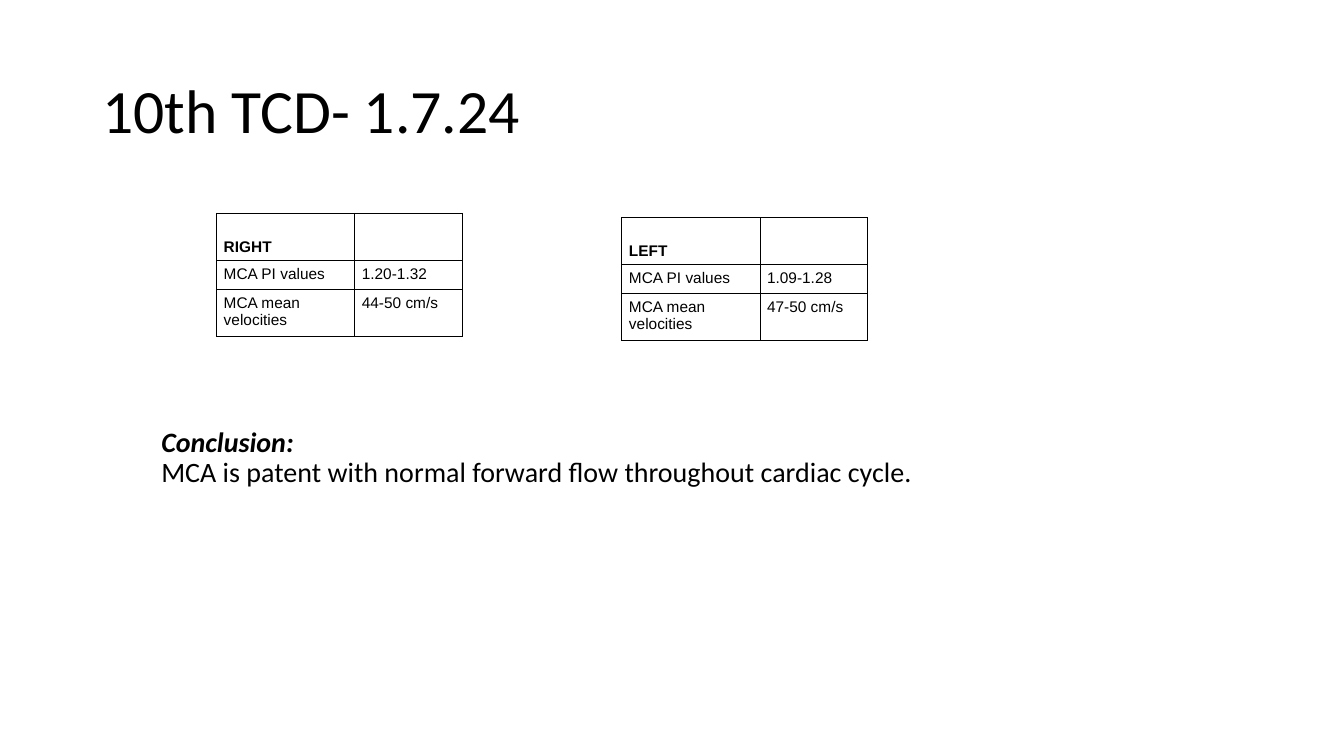
from lxml.etree import SubElement
from pptx import Presentation
from pptx.dml.color import RGBColor
from pptx.enum.text import MSO_ANCHOR as Anchor, MSO_AUTO_SIZE as AutoSize, PP_ALIGN as Align
from pptx.oxml.ns import qn
from pptx.util import Pt

BLACK = RGBColor(0x00, 0x00, 0x00)
WHITE = RGBColor(0xFF, 0xFF, 0xFF)


class SlideBuilder:
    """Holds the style and the current slide."""

    text_font = "Calibri"
    table_font = "Arial"
    table_size = 11
    border_width = 0.75
    column_widths = (98.64, 77.04)
    row_heights = (33.6, 20.7, 33.6)

    def __init__(self, slide):
        self.slide = slide

    def add_run(self, paragraph, text, font, size, bold=False, italic=False):
        run = paragraph.add_run()
        run.text = text
        run.font.name = font
        run.font.size = Pt(size)
        run.font.bold = bold
        run.font.italic = italic
        run.font.color.rgb = BLACK

    def fill_placeholder(self, shape, box, lines, size):
        """Each line is its text and whether it is emphasised."""
        shape.left, shape.top, shape.width, shape.height = map(Pt, box)
        frame = shape.text_frame
        frame.word_wrap = True
        frame.auto_size = AutoSize.NONE
        frame.vertical_anchor = Anchor.MIDDLE
        for index, (text, emphasis) in enumerate(lines):
            paragraph = frame.add_paragraph() if index else frame.paragraphs[0]
            paragraph.alignment = Align.LEFT
            paragraph.line_spacing = 0.9
            paragraph.space_before = Pt(0)
            properties = paragraph._p.get_or_add_pPr()
            properties.set("marL", "0")
            properties.set("indent", "0")
            SubElement(properties, qn("a:buNone"))
            self.add_run(paragraph, text, self.text_font, size, emphasis, emphasis)

    def style_cell(self, cell):
        cell.margin_left = cell.margin_right = Pt(5.04)
        cell.margin_top = cell.margin_bottom = Pt(3.6)
        properties = cell._tc.get_or_add_tcPr()
        for side in ("lnL", "lnR", "lnT", "lnB"):
            line = SubElement(properties, qn(f"a:{side}"), w=str(Pt(self.border_width)))
            fill = SubElement(line, qn("a:solidFill"))
            SubElement(fill, qn("a:srgbClr"), val=str(BLACK))
        cell.fill.solid()
        cell.fill.fore_color.rgb = WHITE

    def add_table(self, left, top, rows):
        frame = self.slide.shapes.add_table(
            len(rows), len(self.column_widths), Pt(left), Pt(top),
            Pt(sum(self.column_widths)), Pt(sum(self.row_heights)))
        table = frame.table
        table.first_row = table.horz_banding = False
        for column, width in zip(table.columns, self.column_widths):
            column.width = Pt(width)
        for row_index, (row, height) in enumerate(zip(table.rows, self.row_heights)):
            row.height = Pt(height)
            header = row_index == 0
            for cell, text in zip(row.cells, rows[row_index]):
                self.style_cell(cell)
                cell.vertical_anchor = Anchor.BOTTOM if header else Anchor.TOP
                if text:
                    self.add_run(cell.text_frame.paragraphs[0], text,
                                 self.table_font, self.table_size, bold=header)


def main():
    presentation = Presentation()
    presentation.slide_width = Pt(960)
    presentation.slide_height = Pt(540)
    slide = presentation.slides.add_slide(presentation.slide_layouts[1])
    builder = SlideBuilder(slide)

    # Title and conclusion
    builder.fill_placeholder(slide.shapes.title, (66, 28.8, 828, 104.4),
                             [("10th TCD- 1.7.24", False)], 44)
    builder.fill_placeholder(
        slide.placeholders[1], (108, 278.64, 630.72, 97.92),
        [("Conclusion:", True),
         ("MCA is patent with normal forward flow throughout cardiac cycle.", False)], 20)

    # One table of readings per side
    for side, left, top, pulsatility, velocity in (
            ("RIGHT", 154.8, 152.4, "1.20-1.32", "44-50 cm/s"),
            ("LEFT", 444.24, 155.52, "1.09-1.28", "47-50 cm/s")):
        builder.add_table(left, top, [
            (side, ""),
            ("MCA PI values", pulsatility),
            ("MCA mean velocities", velocity)])

    presentation.save("out.pptx")


if __name__ == "__main__":
    main()
